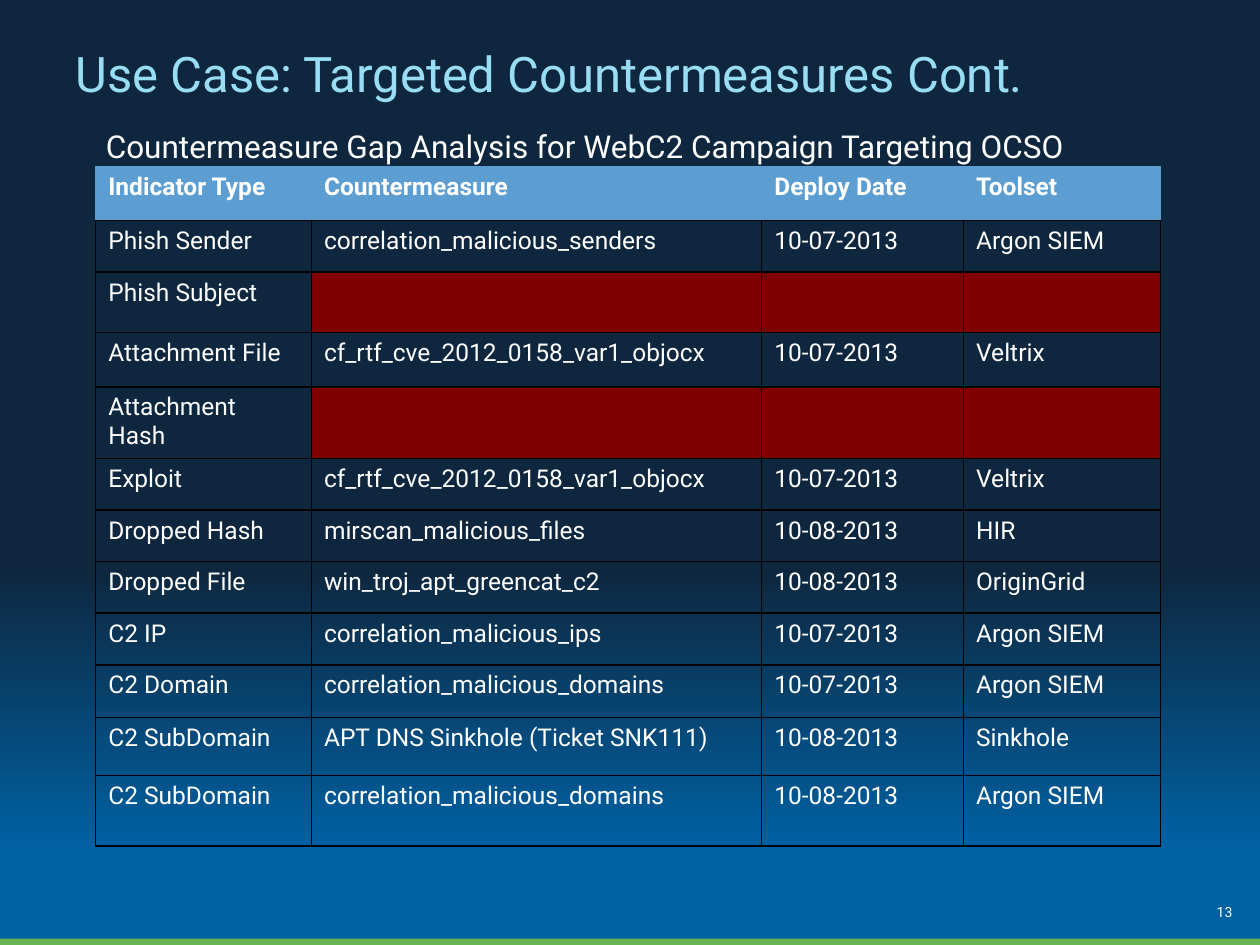
from dataclasses import dataclass

from lxml import etree
from pptx import Presentation
from pptx import util as u
from pptx.dml.color import RGBColor
from pptx.enum import shapes, text
from pptx.oxml.ns import qn


@dataclass(frozen=True)
class Theme:
    """Colours, font and type sizes of the deck."""
    night: str = "0E273E"
    ocean: str = "0061A3"
    sky: str = "99DDF5"
    header: str = "5C9ED2"
    gap: str = "800000"
    bar: str = "69B453"
    ink: str = "FFFFFF"
    rule: str = "000000"
    font: str = "Roboto"
    title: int = 28
    lead: int = 18
    cell: int = 14
    number: int = 8


THEME = Theme()
COLUMNS = (171, 357, 160, 156)
ROWS = (43, 41, 48, 43, 49, 41, 41, 41, 41, 42, 46, 56)
HEADINGS = ("Indicator Type", "Countermeasure", "Deploy Date", "Toolset")
INDICATORS = (
    ("Phish Sender", "correlation_malicious_senders", "10-07-2013", "Argon SIEM"),
    ("Phish Subject", "", "", ""),
    ("Attachment File", "cf_rtf_cve_2012_0158_var1_objocx", "10-07-2013", "Veltrix"),
    ("Attachment Hash", "", "", ""),
    ("Exploit", "cf_rtf_cve_2012_0158_var1_objocx", "10-07-2013", "Veltrix"),
    ("Dropped Hash", "mirscan_malicious_files", "10-08-2013", "HIR"),
    ("Dropped File", "win_troj_apt_greencat_c2", "10-08-2013", "OriginGrid"),
    ("C2 IP", "correlation_malicious_ips", "10-07-2013", "Argon SIEM"),
    ("C2 Domain", "correlation_malicious_domains", "10-07-2013", "Argon SIEM"),
    ("C2 SubDomain", "APT DNS Sinkhole (Ticket SNK111)", "10-08-2013", "Sinkhole"),
    ("C2 SubDomain", "correlation_malicious_domains", "10-08-2013", "Argon SIEM"),
)


def area(deck, left, top, width, height):
    """Turn percentages of the slide into a box of lengths."""
    sides = (deck.slide_width, deck.slide_height) * 2
    return [u.Emu(round(side * share / 100))
            for side, share in zip(sides, (left, top, width, height))]


def place(shape, box):
    """Move a shape into a box."""
    shape.left, shape.top, shape.width, shape.height = box


def write(para, words, size, colour=THEME.ink, bold=False):
    """Fill a paragraph and set its font."""
    para.text = words
    para.font.name = THEME.font
    para.font.size = u.Pt(size)
    para.font.bold = bold
    para.font.color.rgb = RGBColor.from_string(colour)


def paint_background(page):
    """Shade the page from night at the top to ocean at the bottom."""
    fill = page.background.fill
    fill.gradient()
    fill.gradient_angle = 270
    stops = zip(fill.gradient_stops, (0.6, 0.9), (THEME.night, THEME.ocean))
    for stop, position, colour in stops:
        stop.position = position
        stop.color.rgb = RGBColor.from_string(colour)


def add_footer_bar(page, box):
    """Draw the coloured strip along the bottom edge."""
    bar = page.shapes.add_shape(shapes.MSO_SHAPE.RECTANGLE, *box)
    bar.shadow.inherit = False
    bar.fill.solid()
    bar.fill.fore_color.rgb = RGBColor.from_string(THEME.bar)
    bar.line.fill.background()


def set_title(page, box, words):
    """Place and write the title."""
    title = page.shapes.title
    place(title, box)
    frame = title.text_frame
    frame.auto_size = text.MSO_AUTO_SIZE.NONE
    frame.vertical_anchor = text.MSO_ANCHOR.MIDDLE
    para = frame.paragraphs[0]
    para.alignment = text.PP_ALIGN.LEFT
    write(para, words, THEME.title, THEME.sky)


def set_lead(page, box, words):
    """Place the body and write its indented line without a bullet."""
    body = page.placeholders[1]
    place(body, box)
    body.text_frame.auto_size = text.MSO_AUTO_SIZE.NONE
    para = body.text_frame.paragraphs[0]
    props = para._p.get_or_add_pPr()
    props.set("marL", str(u.Inches(0.43)))
    props.set("indent", "0")
    etree.SubElement(props, qn("a:buNone"))
    para.space_before = u.Pt(0)
    write(para, words, THEME.lead)


def add_page_number(page, box, words):
    """Write the page number at the lower right."""
    frame = page.shapes.add_textbox(*box).text_frame
    frame.word_wrap = True
    frame.margin_top = frame.margin_bottom = 0
    frame.vertical_anchor = text.MSO_ANCHOR.MIDDLE
    para = frame.paragraphs[0]
    para.alignment = text.PP_ALIGN.RIGHT
    write(para, words, THEME.number)


def set_borders(cell, heading):
    """Rule all four sides of a cell."""
    props = cell._tc.get_or_add_tcPr()
    for side in "LRTB":
        tinted = heading and side != "B"
        line = etree.SubElement(props, qn(f"a:ln{side}"),
                                w=str(u.Pt(0.75 if tinted else 1)))
        solid = etree.SubElement(line, qn("a:solidFill"))
        etree.SubElement(solid, qn("a:srgbClr"),
                         val=THEME.header if tinted else THEME.rule)


def add_gap_table(page, box):
    """Build the gap table, marking missing countermeasures."""
    table = page.shapes.add_table(len(ROWS), len(COLUMNS), *box).table
    table.horz_banding = False
    for column, share in zip(table.columns, COLUMNS):
        column.width = round(box[2] * share / sum(COLUMNS))
    for row, share in zip(table.rows, ROWS):
        row.height = round(box[3] * share / sum(ROWS))
    for index, record in enumerate((HEADINGS, *INDICATORS)):
        heading = index == 0
        for cell, words in zip(table.rows[index].cells, record):
            set_borders(cell, heading)
            if words and not heading:
                cell.fill.background()
            else:
                cell.fill.solid()
                colour = THEME.header if heading else THEME.gap
                cell.fill.fore_color.rgb = RGBColor.from_string(colour)
            write(cell.text_frame.paragraphs[0], words, THEME.cell, bold=heading)


def main():
    """Build the deck and save it."""
    deck = Presentation()
    deck.slide_width, deck.slide_height = u.Inches(10), u.Inches(7.5)
    page = deck.slides.add_slide(deck.slide_layouts[1])
    paint_background(page)
    add_footer_bar(page, area(deck, 0, 99.33, 100, 0.67))
    set_title(page, area(deck, 5, 3.6, 90, 8.13),
              "Use Case: Targeted Countermeasures Cont.")
    set_lead(page, area(deck, 3.1, 12.8, 93.9, 76.67),
             "Countermeasure Gap Analysis for WebC2 Campaign Targeting OCSO")
    add_page_number(page, area(deck, 94.9, 95.33, 3.9, 2.27), "13")
    add_gap_table(page, area(deck, 7.6, 17.6, 84.5, 70.93))
    deck.save("out.pptx")


if __name__ == "__main__":
    main()
